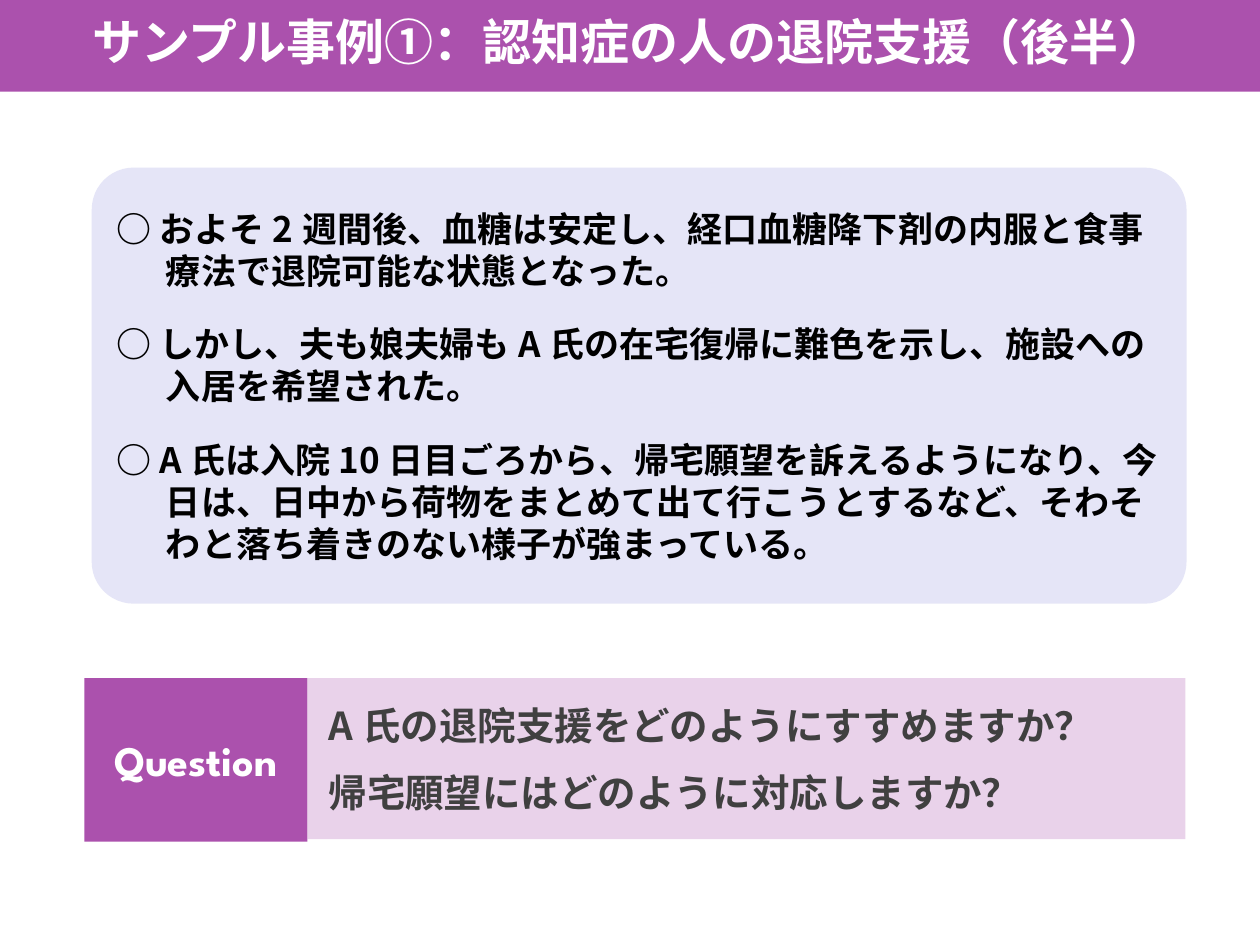
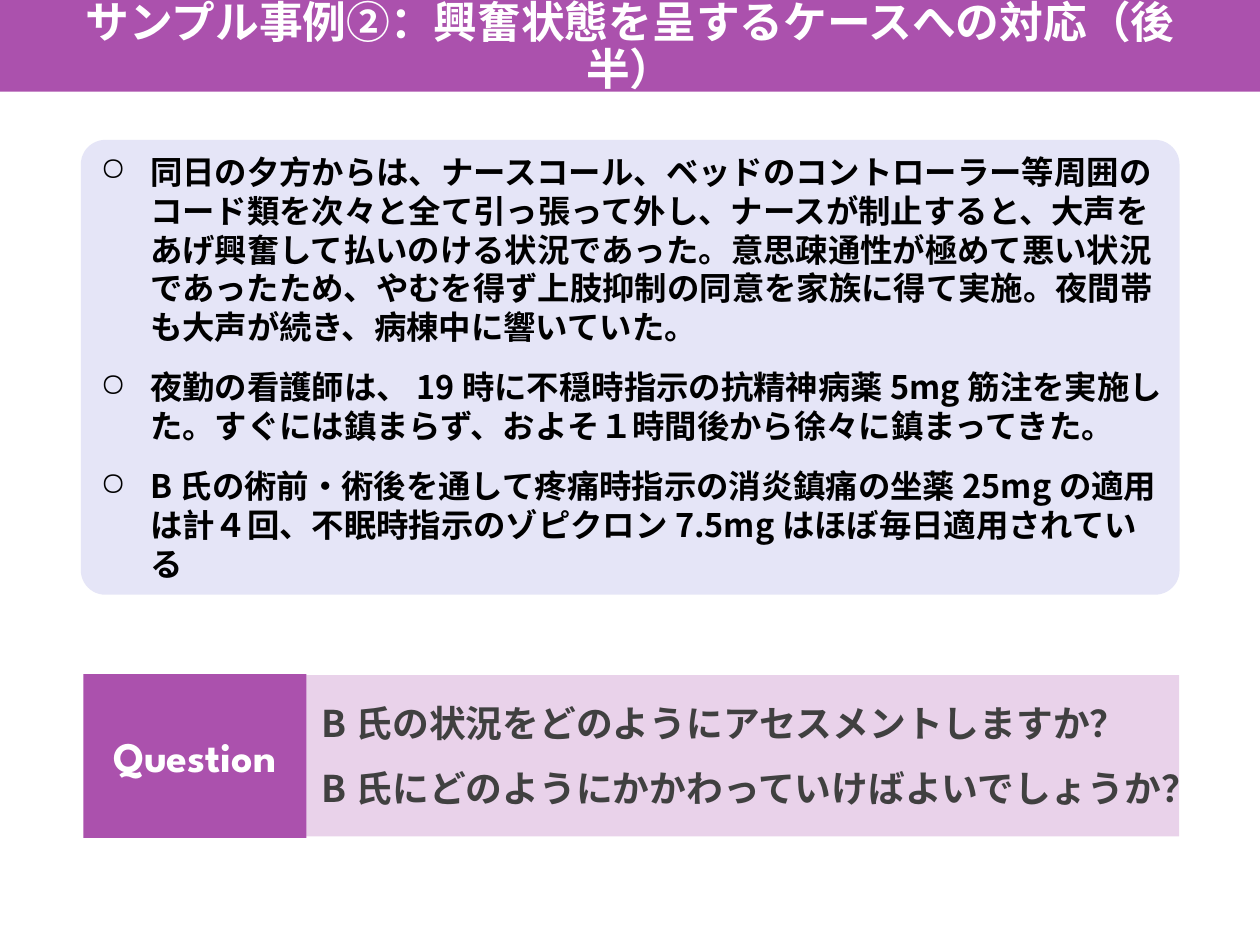
"""Builds two case-study slides, each with a title band, a case panel and a question bar."""
from lxml.etree import Element, SubElement
from pptx import Presentation
from pptx.dml.color import RGBColor
from pptx.enum.shapes import MSO_SHAPE
from pptx.enum.text import MSO_ANCHOR, PP_ALIGN
from pptx.oxml.ns import qn
from pptx.util import Cm, Pt

PURPLE = RGBColor(0xAB, 0x51, 0xAD)
PINK = RGBColor(0xE9, 0xD2, 0xEA)
LAVENDER = RGBColor(0xE5, 0xE5, 0xF7)
WHITE = RGBColor(0xFF, 0xFF, 0xFF)
BLACK = RGBColor(0x00, 0x00, 0x00)
GREY = RGBColor(0x40, 0x40, 0x40)
BODY_FONT = "Noto Sans CJK JP"
LABEL_FONT = "League Spartan"

CASES = [
    {
        "title": "サンプル事例①：認知症の人の退院支援（後半）",
        "title_place": (1.09, -0.03, 23.22, 1.85),
        "title_size": 28,
        "panel_place": (1.85, 3.38, 22.07, 8.79),
        "corner": 0.096,
        "facts": [
            "○ およそ2週間後、血糖は安定し、経口血糖降下剤の内服と食事療法で退院可能な状態となった。",
            "○ しかし、夫も娘夫婦もA氏の在宅復帰に難色を示し、施設への入居を希望された。",
            "○ A氏は入院10日目ごろから、帰宅願望を訴えるようになり、今日は、日中から荷物をまとめて"
            "出て行こうとするなど、そわそわと落ち着きのない様子が強まっている。",
        ],
        "fact_size": 20,
        "fact_gap": 18,
        "bullet": None,
        "questions": [" A氏の退院支援をどのようにすすめますか？", " 帰宅願望にはどのように対応しますか？"],
        "question_size": 22,
        "question_place": (6.2, 13.67, 17.7, 3.25),
        "label_place": (1.7, 13.67, 4.5, 3.3),
    },
    {
        "title": "サンプル事例②：興奮状態を呈するケースへの対応（後半）",
        "title_place": (1.27, 0, 22.86, 1.93),
        "title_size": 25,
        "panel_place": (1.63, 2.82, 22.15, 9.17),
        "corner": 0.054,
        "facts": [
            "同日の夕方からは、ナースコール、ベッドのコントローラー等周囲のコード類を次々と全て"
            "引っ張って外し、ナースが制止すると、大声をあげ興奮して払いのける状況であった。"
            "意思疎通性が極めて悪い状況であったため、やむを得ず上肢抑制の同意を家族に得て実施。"
            "夜間帯も大声が続き、病棟中に響いていた。",
            "夜勤の看護師は、19時に不穏時指示の抗精神病薬5mg筋注を実施した。"
            "すぐには鎮まらず、およそ１時間後から徐々に鎮まってきた。",
            "B氏の術前・術後を通して疼痛時指示の消炎鎮痛の坐薬25mgの適用は計４回、"
            "不眠時指示のゾピクロン7.5mgはほぼ毎日適用されている",
        ],
        "fact_size": 18.5,
        "fact_gap": 12,
        "bullet": "○",
        "questions": [" B氏の状況をどのようにアセスメントしますか？", " B氏にどのようにかかわっていけばよいでしょうか？"],
        "question_size": 21,
        "question_place": (6.07, 13.61, 17.7, 3.25),
        "label_place": (1.68, 13.59, 4.5, 3.3),
    },
]


def add_panel(page, kind, place, color):
    panel = page.shapes.add_shape(kind, *map(Cm, place))
    panel.shadow.inherit = False
    panel.fill.solid()
    panel.fill.fore_color.rgb = color
    panel.line.fill.background()
    return panel


def write(box, lines, size, color, insets, font=BODY_FONT, align=PP_ALIGN.LEFT, gaps=(0, 0),
          spacing=1.0, hanging=0, bullet=None):
    frame = box.text_frame
    frame.word_wrap = True
    frame.vertical_anchor = MSO_ANCHOR.MIDDLE
    frame.margin_left, frame.margin_top, frame.margin_right, frame.margin_bottom = map(Cm, insets)
    frame.text = "\n".join(lines)
    for index, paragraph in enumerate(frame.paragraphs):
        paragraph.alignment = align
        paragraph.line_spacing = spacing
        paragraph.space_before = Pt(gaps[min(index, 1)])
        paragraph.font.size = Pt(size)
        paragraph.font.bold = True
        paragraph.font.color.rgb = color
        paragraph.font.name = font
        properties = paragraph._p.get_or_add_pPr()
        defaults = properties.find(qn("a:defRPr"))
        SubElement(defaults, qn("a:ea"), typeface=font)
        if hanging:
            properties.set("marL", str(Cm(hanging)))
            properties.set("indent", str(-Cm(hanging)))
        if bullet:
            defaults.addprevious(Element(qn("a:buChar"), char=bullet))


deck = Presentation()
deck.slide_width, deck.slide_height = Cm(25.4), Cm(19.05)

for case in CASES:
    page = deck.slides.add_slide(deck.slide_layouts[6])

    add_panel(page, MSO_SHAPE.RECTANGLE, (0, 0, 25.4, 1.85), PURPLE)
    title = page.shapes.add_textbox(*map(Cm, case["title_place"]))
    write(title, [case["title"]], case["title_size"], WHITE, (0.25, 0.13, 0.25, 0.13),
          align=PP_ALIGN.CENTER, spacing=0.9)

    facts = add_panel(page, MSO_SHAPE.ROUNDED_RECTANGLE, case["panel_place"], LAVENDER)
    facts.adjustments[0] = case["corner"]
    write(facts, case["facts"], case["fact_size"], BLACK, (0.25, 0.13, 0.1, 0.13),
          gaps=(6, case["fact_gap"]), hanging=1, bullet=case["bullet"])

    questions = add_panel(page, MSO_SHAPE.RECTANGLE, case["question_place"], PINK)
    write(questions, case["questions"], case["question_size"], GREY, (0.25, 0.13, 0, 0.13),
          gaps=(6, 12))

    label = add_panel(page, MSO_SHAPE.RECTANGLE, case["label_place"], PURPLE)
    write(label, ["Question"], 24, WHITE, (0.1, 0.1, 0.1, 0.1), font=LABEL_FONT,
          align=PP_ALIGN.CENTER)

deck.save("out.pptx")
